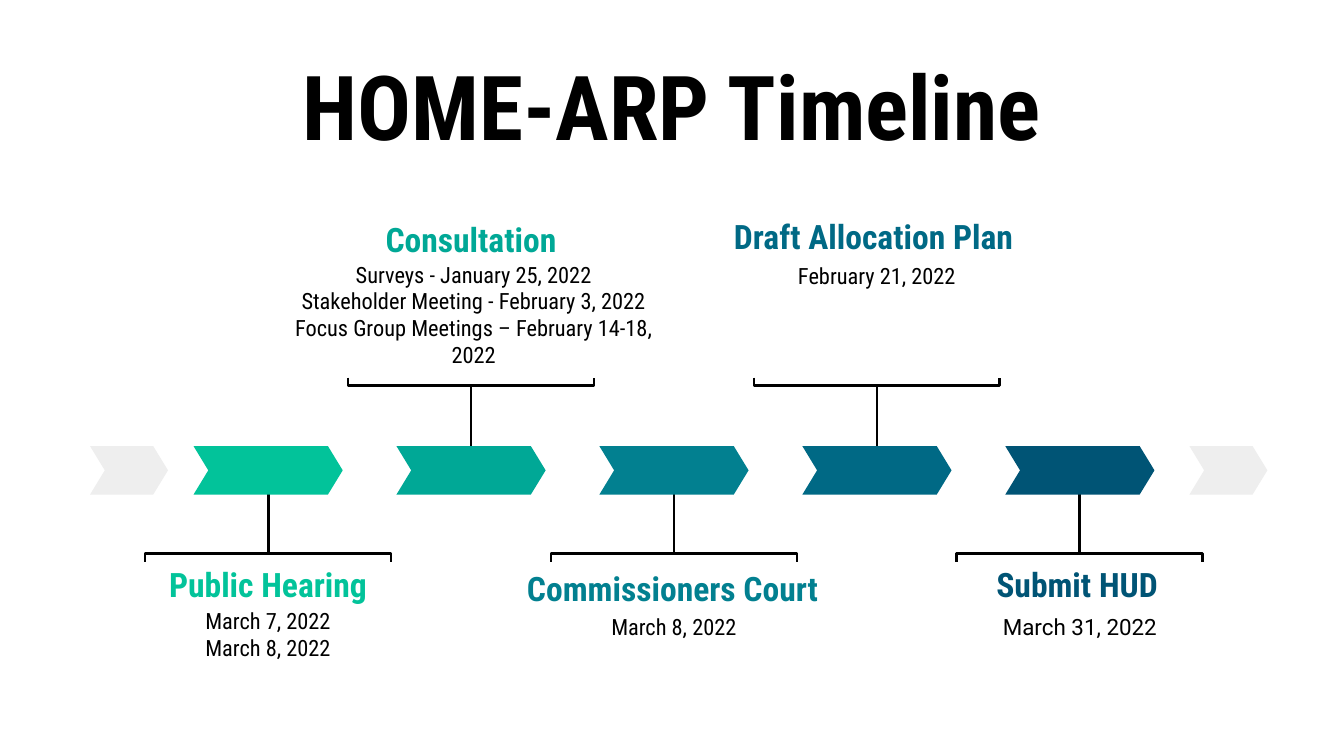
from dataclasses import dataclass

from lxml import etree
from pptx import Presentation
from pptx.dml.color import RGBColor
from pptx.enum.shapes import MSO_CONNECTOR, MSO_SHAPE
from pptx.enum.text import MSO_ANCHOR, PP_ALIGN
from pptx.oxml.ns import qn
from pptx.util import Inches, Pt

CHEVRON = MSO_SHAPE.CHEVRON
STRAIGHT = MSO_CONNECTOR.STRAIGHT
TOP, MIDDLE = MSO_ANCHOR.TOP, MSO_ANCHOR.MIDDLE
CENTER = PP_ALIGN.CENTER

COLORS = {
    "ink": "000000",
    "edge": "EEEEEE",
    "hearing": "02C39A",
    "consultation": "00A896",
    "court": "028090",
    "draft": "006985",
    "submit": "005475",
}
CONDENSED = "Roboto Condensed"

SLIDE_WIDTH = 10
SLIDE_HEIGHT = SLIDE_WIDTH * 9 / 16
FIRST_LEFT, PITCH = 1.08, 1.51
BRACKET_WIDTH, TICK = 1.83, 0.06
UPPER_BAR, LOWER_BAR = 2.87, 4.12
ARROW_TOP, ARROW_WIDTH, ARROW_HEIGHT = 3.32, 1.11, 0.36
AXIS = ARROW_TOP + ARROW_HEIGHT / 2
EDGE_WIDTH = 0.58
EDGE_LEFTS = (0.67, 8.85)
LINE_WIDTH = Pt(1.5)


@dataclass
class Box:
    left: float
    top: float
    width: float
    height: float


@dataclass
class Milestone:
    heading: str
    color: str
    above: bool
    heading_box: Box
    details: list[str]
    details_box: Box
    details_font: str = CONDENSED


MILESTONES = [
    Milestone("Public Hearing", "hearing", False, Box(1.08, 4.19, 1.83, 0.31),
              ["March 7, 2022", "March 8, 2022"], Box(1.08, 4.42, 1.83, 0.97)),
    Milestone("Consultation", "consultation", True, Box(2.59, 1.62, 1.83, 0.31),
              ["Surveys - January 25, 2022",
               "Stakeholder Meeting - February 3, 2022",
               "Focus Group Meetings – February 14-18, 2022"],
              Box(1.99, 1.84, 3.07, 0.97)),
    Milestone("Commissioners Court", "court", False, Box(3.79, 4.22, 2.43, 0.31),
              ["March 8, 2022"], Box(4.1, 4.46, 1.83, 0.97)),
    Milestone("Draft Allocation Plan", "draft", True, Box(5.35, 1.6, 2.3, 0.31),
              ["February 21, 2022"], Box(5.61, 1.85, 1.83, 0.97)),
    Milestone("Submit HUD", "submit", False, Box(7.1, 4.19, 1.83, 0.31),
              ["March 31, 2022"], Box(7.12, 4.46, 1.83, 0.97), "Roboto"),
]


def rgb(color: str) -> RGBColor:
    return RGBColor.from_string(COLORS[color])


def add_text(slide, box: Box, lines: list[str], size: int, color: str = "ink",
             font: str = CONDENSED, bold: bool = False, anchor=TOP) -> None:
    frame = slide.shapes.add_textbox(
        Inches(box.left), Inches(box.top), Inches(box.width), Inches(box.height)
    ).text_frame
    frame.word_wrap = True
    frame.vertical_anchor = anchor
    frame.margin_left = frame.margin_right = Inches(0.1)
    frame.margin_top = frame.margin_bottom = Inches(0.1)
    for index, line in enumerate(lines):
        paragraph = frame.add_paragraph() if index else frame.paragraphs[0]
        paragraph.alignment = CENTER
        run = paragraph.add_run()
        run.text = line
        run.font.name = font
        run.font.size = Pt(size)
        run.font.bold = bold
        run.font.color.rgb = rgb(color)


def add_arrow(slide, left: float, width: float, color: str) -> None:
    arrow = slide.shapes.add_shape(
        CHEVRON, Inches(left), Inches(ARROW_TOP), Inches(width), Inches(ARROW_HEIGHT))
    arrow.adjustments[0] = 0.305
    arrow.shadow.inherit = False
    arrow.fill.solid()
    arrow.fill.fore_color.rgb = rgb(color)
    arrow.line.fill.background()


def add_bracket(slide, left: float, above: bool) -> None:
    """Draw a bar with ticks facing the text, and a stem from it to the axis."""
    bar = UPPER_BAR if above else LOWER_BAR
    tick_end = bar - TICK if above else bar + TICK
    right = left + BRACKET_WIDTH
    builder = slide.shapes.build_freeform(Inches(left), Inches(tick_end))
    builder.add_line_segments(
        [(Inches(x), Inches(y)) for x, y in ((left, bar), (right, bar), (right, tick_end))],
        close=False)
    bracket = builder.convert_to_shape()
    bracket.shadow.inherit = False
    bracket.fill.background()

    middle = Inches(left + BRACKET_WIDTH / 2)
    stem = slide.shapes.add_connector(STRAIGHT, middle, Inches(AXIS), middle, Inches(bar))
    for part in (bracket, stem):
        part.line.color.rgb = rgb("ink")
        part.line.width = LINE_WIDTH
    etree.SubElement(stem._element.spPr, qn("a:effectLst"))


def add_milestone(slide, left: float, milestone: Milestone) -> None:
    add_text(slide, milestone.heading_box, [milestone.heading], 18,
             milestone.color, bold=True, anchor=MIDDLE)
    add_text(slide, milestone.details_box, milestone.details, 12,
             font=milestone.details_font)
    add_bracket(slide, left, milestone.above)
    add_arrow(slide, left + (BRACKET_WIDTH - ARROW_WIDTH) / 2, ARROW_WIDTH, milestone.color)


def main() -> None:
    presentation = Presentation()
    presentation.slide_width = Inches(SLIDE_WIDTH)
    presentation.slide_height = Inches(SLIDE_HEIGHT)
    slide = presentation.slides.add_slide(presentation.slide_layouts[6])

    add_text(slide, Box(0.5, 0.28, 9, 0.63), ["HOME-ARP Timeline"], 48, bold=True)
    for index, milestone in enumerate(MILESTONES):
        add_milestone(slide, FIRST_LEFT + index * PITCH, milestone)
    for left in EDGE_LEFTS:
        add_arrow(slide, left, EDGE_WIDTH, "edge")

    presentation.save("out.pptx")


if __name__ == "__main__":
    main()
